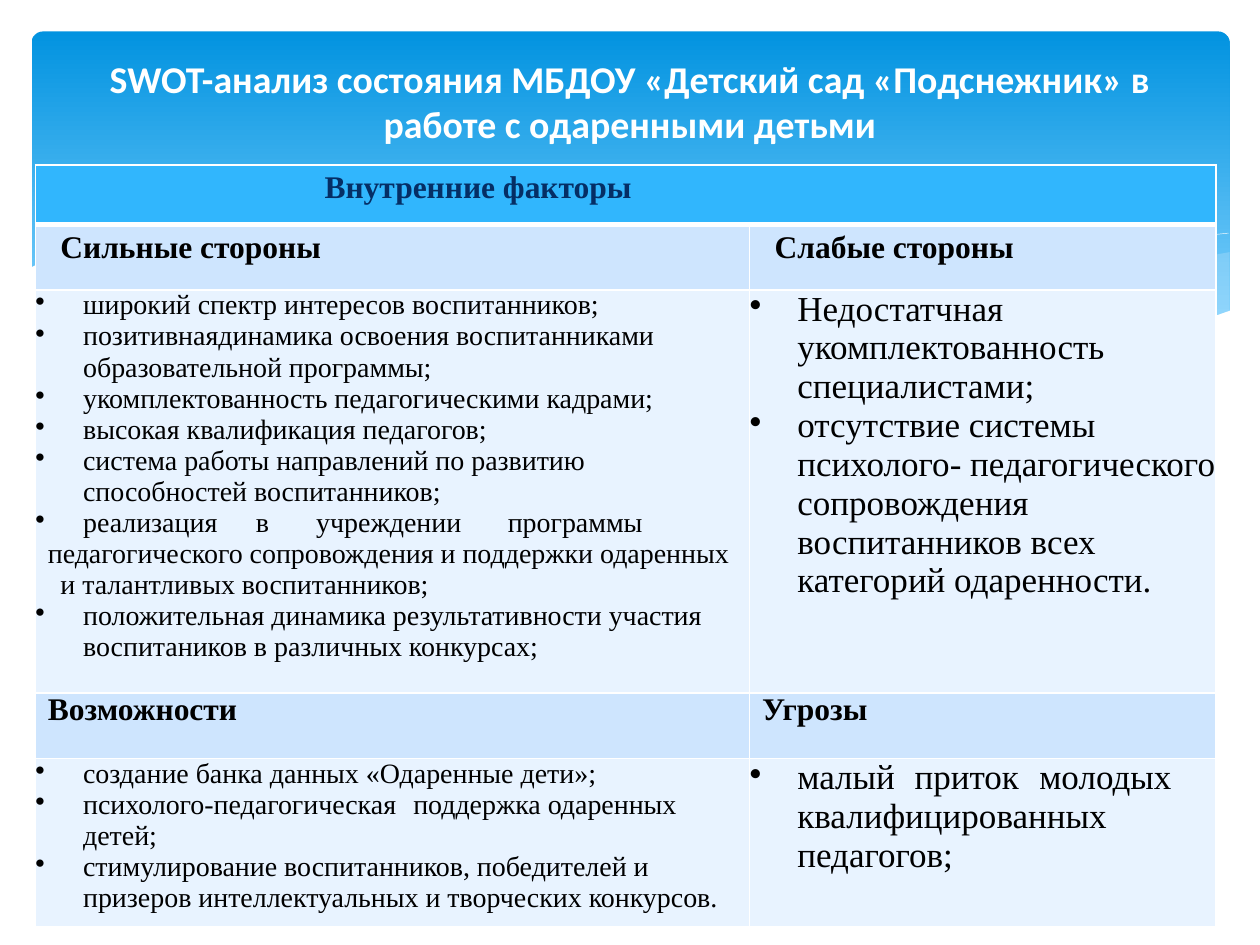
from collections import namedtuple

from lxml import etree
from pptx import Presentation
from pptx.dml.color import RGBColor
from pptx.enum.shapes import MSO_SHAPE
from pptx.enum.text import MSO_ANCHOR, PP_ALIGN
from pptx.oxml.ns import qn
from pptx.util import Inches, Pt

ROUNDED = MSO_SHAPE.ROUNDED_RECTANGLE
MIDDLE = MSO_ANCHOR.MIDDLE
CENTER = PP_ALIGN.CENTER

WHITE = RGBColor(0xFF, 0xFF, 0xFF)
BLACK = RGBColor(0, 0, 0)
NAVY = RGBColor(0x05, 0x2E, 0x65)
SKY_DARK = RGBColor(0x02, 0x93, 0xE0)
SKY_LIGHT = RGBColor(0x83, 0xD3, 0xFE)
WAVE_BLUE = RGBColor(0xC6, 0xE7, 0xFC)
HEADER_BLUE = RGBColor(0x31, 0xB6, 0xFD)
LABEL_BLUE = RGBColor(0xCE, 0xE5, 0xFE)
BODY_BLUE = RGBColor(0xE8, 0xF3, 0xFF)

WIDTH, HEIGHT = Inches(10), Inches(7.5)
COLUMN, ROW = WIDTH / 100, HEIGHT / 100

Box = namedtuple("Box", "left top width height")
Item = namedtuple("Item", "text tabs margin indent bullet", defaults=((), 3.8, -3.8, True))

BANNER_BOX = Box(2.5, 3.33, 95.1, 36)
TITLE_BOX = Box(5, 4.93, 90, 11.47)
TABLE_BOX = Box(2.8, 17.47, 93.7, 76.53)
COLUMN_SHARES = (0.605, 0.395)
ROW_HEIGHTS = (6.27, 6.93, 40, 6.93, 16.4)

TINTED_WAVES = [
    (Box(66.1, 26.67, 31.5, 10.4), 29,
     [(1, 0), (.8, .15), (.6, .33), (.3, .61), (0, .83), (.2, .93), (.4, .99),
      (.5, 1), (.6, .98), (.75, .9), (.9, .75), (1, .6)]),
    (Box(28.6, 24.67, 60.6, 12.4), 40,
     [(1, .95), (.8, .73), (.6, .45), (.4, .16), (.25, .04), (.15, 0), (.07, .02),
      (0, .06), (.15, .22), (.3, .45), (.5, .73), (.7, .94), (.85, 1), (.92, .99)]),
]
WAVE_LINES = [
    (Box(30.9, 24.93, 59.8, 11.33),
     [(0, .09), (.1, .02), (.2, 0), (.35, .06), (.5, .2), (.7, .46), (.85, .71), (1, 1)]),
    (Box(61.3, 24.67, 36.2, 9.47),
     [(0, 1), (.3, .61), (.5, .39), (.7, .2), (.85, .08), (1, 0)]),
]
WHITE_WAVE = (
    Box(2.3, 24.53, 95.4, 19.33),
    [(1, .43), (.97, .5), (.94, .56), (.9, .61), (.85, .64), (.8, .64), (.75, .62),
     (.7, .58), (.6, .47), (.5, .33), (.4, .18), (.3, .06), (.2, 0), (.15, 0),
     (.1, .02), (.05, .08), (.02, .14), (0, .2), (0, 1), (1, 1)])

STRENGTHS = [
    Item("широкий спектр интересов воспитанников;"),
    Item("позитивнаядинамика освоения воспитанниками образовательной программы;"),
    Item("укомплектованность педагогическими кадрами;"),
    Item("высокая квалификация педагогов;"),
    Item("система работы направлений по развитию способностей воспитанников;"),
    Item("реализация\tв\tучреждении\tпрограммы", (17.5, 22.3, 37.5)),
    Item("педагогического сопровождения и поддержки одаренных и талантливых воспитанников;",
         (), 2, -1, False),
    Item("положительная динамика результативности участия воспитаников в различных конкурсах;"),
]
WEAKNESSES = [
    Item("Недостатчная укомплектованность специалистами;"),
    Item("отсутствие системы психолого- педагогического сопровождения воспитанников "
         "всех категорий одаренности."),
]
OPPORTUNITIES = [
    Item("создание банка данных «Одаренные дети»;"),
    Item("психолого-педагогическая\tподдержка одаренных детей;", (30,)),
    Item("стимулирование воспитанников, победителей и призеров интеллектуальных "
         "и творческих конкурсов."),
]
THREATS = [Item("малый\tприток\tмолодых квалифицированных педагогов;", (13.1, 23))]


def place(box):
    return (int(box.left * COLUMN), int(box.top * ROW),
            int(box.width * COLUMN), int(box.height * ROW))


def add_curve(slide, box, shares, closed):
    left, top, width, height = place(box)
    points = [(left + int(x * width), top + int(y * height)) for x, y in shares]
    builder = slide.shapes.build_freeform(*points[0])
    builder.add_line_segments(points[1:], close=closed)
    shape = builder.convert_to_shape()
    shape.shadow.inherit = False
    if closed:
        shape.fill.solid()
        shape.line.fill.background()
    else:
        shape.fill.background()
        shape.line.color.rgb = WHITE
        shape.line.width = Pt(0.25)
    return shape


def add_banner(slide, box):
    banner = slide.shapes.add_shape(ROUNDED, *place(box))
    banner.adjustments[0] = 0.034
    banner.shadow.inherit = False
    banner.line.fill.background()
    banner.fill.gradient()
    banner.fill.gradient_angle = 270
    stops = banner.fill.gradient_stops
    for stop, color, position in zip(stops, (SKY_DARK, SKY_LIGHT), (0, 0.9)):
        stop.color.rgb = color
        stop.position = position
    for wave_box, opacity, shares in TINTED_WAVES:
        wave = add_curve(slide, wave_box, shares, True)
        wave.fill.fore_color.rgb = WAVE_BLUE
        color = wave.fill._xPr.find(qn("a:solidFill"))[0]
        etree.SubElement(color, qn("a:alpha"), val=str(opacity * 1000))
    for line_box, shares in WAVE_LINES:
        add_curve(slide, line_box, shares, False)
    add_curve(slide, *WHITE_WAVE, True).fill.fore_color.rgb = WHITE


def format_text(paragraph, font_name, size, color, bold):
    for run in paragraph.runs:
        run.font.name = font_name
        run.font.size = Pt(size)
        run.font.color.rgb = color
        run.font.bold = bold


def add_title(slide, box):
    text_frame = slide.shapes.add_textbox(*place(box)).text_frame
    text_frame.word_wrap = True
    text_frame.vertical_anchor = MIDDLE
    text_frame.text = ("SWOT-анализ состояния МБДОУ «Детский сад «Подснежник» "
                       "в работе с одаренными детьми")
    paragraph = text_frame.paragraphs[0]
    paragraph.alignment = CENTER
    format_text(paragraph, "Calibri", 21.6, WHITE, True)


def style_cell(cell, color, bottom_width=1):
    cell.margin_left = cell.margin_right = cell.margin_top = cell.margin_bottom = 0
    properties = cell._tc.get_or_add_tcPr()
    for side in "LRTB":
        width = bottom_width if side == "B" else 1
        border = etree.SubElement(properties, qn(f"a:ln{side}"), w=str(Pt(width)))
        fill = etree.SubElement(border, qn("a:solidFill"))
        etree.SubElement(fill, qn("a:srgbClr"), val=str(WHITE))
    cell.fill.solid()
    cell.fill.fore_color.rgb = color


def set_label(cell, text, color=BLACK, indent=2, lowered=False):
    cell.text_frame.text = text
    cell.margin_left = int(indent * COLUMN)
    paragraph = cell.text_frame.paragraphs[0]
    if lowered:
        cell.margin_top = Pt(11.6)
        paragraph.line_spacing = Pt(11.6)
    format_text(paragraph, "Times New Roman", 18, color, True)
    return paragraph


def set_items(cell, items, size):
    cell.text_frame.text = "\n".join(item.text for item in items)
    for paragraph, item in zip(cell.text_frame.paragraphs, items):
        properties = paragraph._p.get_or_add_pPr()
        properties.set("marL", str(int(item.margin * COLUMN)))
        properties.set("indent", str(int(item.indent * COLUMN)))
        if item.bullet:
            etree.SubElement(properties, qn("a:buChar"), char="•")
        if item.tabs:
            tab_list = etree.SubElement(properties, qn("a:tabLst"))
            for position in item.tabs:
                etree.SubElement(tab_list, qn("a:tab"), pos=str(int(position * COLUMN)), algn="l")
        format_text(paragraph, "Times New Roman", size, BLACK, False)


def add_swot_table(slide, box):
    table = slide.shapes.add_table(len(ROW_HEIGHTS), 2, *place(box)).table
    for column, share in zip(table.columns, COLUMN_SHARES):
        column.width = int(share * box.width * COLUMN)
    for row, height in zip(table.rows, ROW_HEIGHTS):
        row.height = int(height * ROW)
    fills = (HEADER_BLUE, LABEL_BLUE, BODY_BLUE, LABEL_BLUE, BODY_BLUE)
    for row_index, color in enumerate(fills):
        for column_index in range(2):
            style_cell(table.cell(row_index, column_index), color, 1 if row_index else 3)

    header = table.cell(0, 0)
    header.merge(table.cell(0, 1))
    set_label(header, "Внутренние факторы", NAVY, lowered=True).alignment = CENTER
    header.margin_right = int(25.4 * COLUMN)
    for index, text in enumerate(("Сильные стороны", "Слабые стороны")):
        set_label(table.cell(1, index), text, lowered=True)
    for index, text in enumerate(("Возможности", "Угрозы")):
        set_label(table.cell(3, index), text, indent=1)
    for row_index, left_items, right_items in ((2, STRENGTHS, WEAKNESSES),
                                               (4, OPPORTUNITIES, THREATS)):
        set_items(table.cell(row_index, 0), left_items, 16)
        table.cell(row_index, 0).margin_right = int(COLUMN)
        set_items(table.cell(row_index, 1), right_items, 20)


def main():
    presentation = Presentation()
    presentation.slide_width, presentation.slide_height = WIDTH, HEIGHT
    slide = presentation.slides.add_slide(presentation.slide_layouts[6])
    add_banner(slide, BANNER_BOX)
    add_title(slide, TITLE_BOX)
    add_swot_table(slide, TABLE_BOX)
    presentation.save("out.pptx")


if __name__ == "__main__":
    main()
